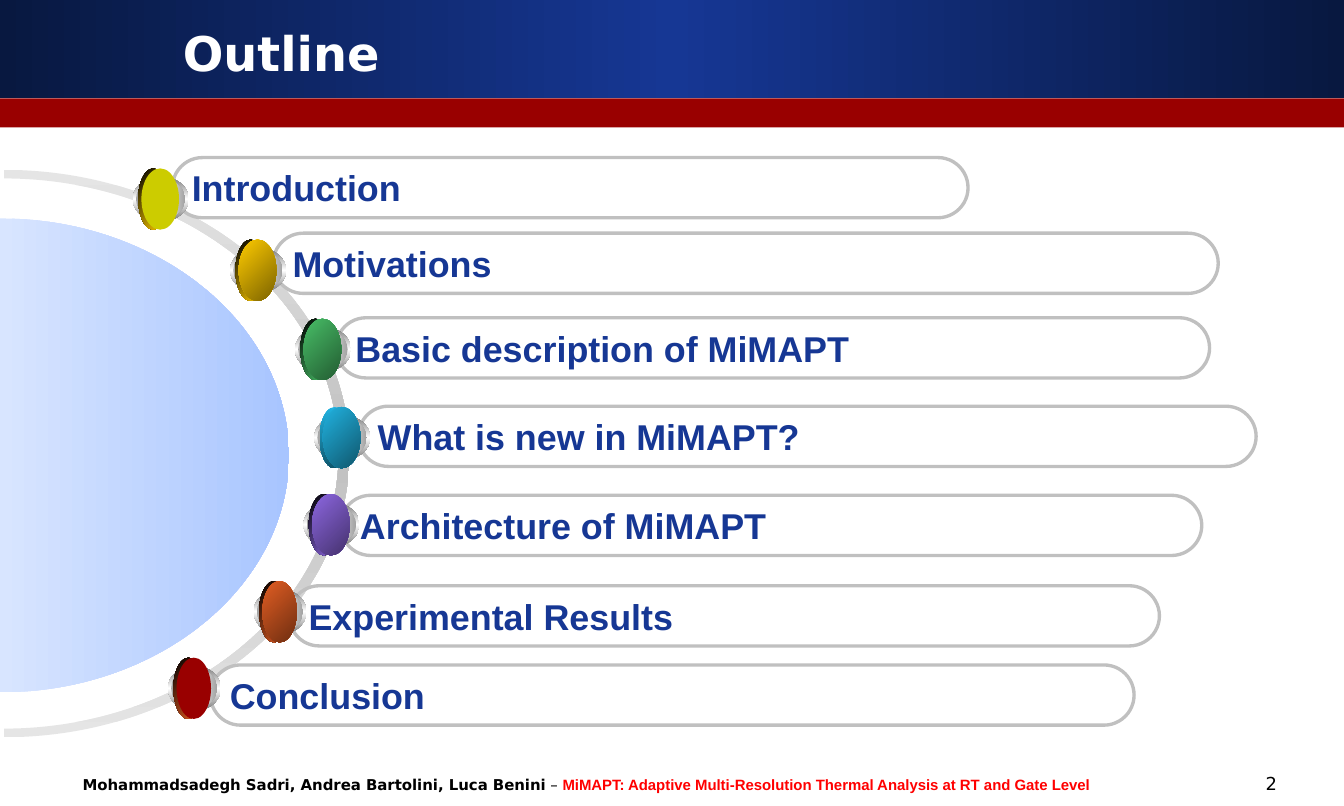
from copy import deepcopy

from pptx import Presentation, util as u
from pptx.dml.color import RGBColor
from pptx.enum import shapes as sh, text as tx
from pptx.oxml.ns import qn

WIDE, HIGH = u.Inches(12.5), u.Inches(7.5)
KAPPA = 0.55  # handle length of a quarter ellipse

NAVY, BLUE = RGBColor(0x08, 0x18, 0x40), RGBColor(0x16, 0x37, 0x94)
CRIMSON, RED = RGBColor(0x99, 0, 0), RGBColor(0xFF, 0, 0)
BLACK, WHITE = RGBColor(0, 0, 0), RGBColor(0xFF, 0xFF, 0xFF)
SILVER, PALE = RGBColor(0xC0, 0xC0, 0xC0), RGBColor(0xE5, 0xE5, 0xE5)
GREY, ASH = RGBColor(0x76, 0x76, 0x76), RGBColor(0xA2, 0xA2, 0xA2)
MIST, SKY = RGBColor(0xD8, 0xE5, 0xFF), RGBColor(0xA8, 0xC5, 0xFF)
GOLD, BRONZE = RGBColor(0xFF, 0xCC, 0), RGBColor(0x7C, 0x63, 0)
GREEN, PINE = RGBColor(0x48, 0xBE, 0x67), RGBColor(0x23, 0x5C, 0x32)
CYAN, TEAL = RGBColor(0x21, 0xB3, 0xE1), RGBColor(0x10, 0x57, 0x6D)
LILAC, PLUM = RGBColor(0x8D, 0x67, 0xE1), RGBColor(0x45, 0x32, 0x6D)
RUST, BROWN = RGBColor(0xE3, 0x5E, 0x23), RGBColor(0x6E, 0x2E, 0x11)
LIME = RGBColor(0xCC, 0xCC, 0)

SANS, ARIAL = "DejaVu Sans", "Arial"

# text, pill (left, top, width), bead (left, top), trim, back colours and angle, face colours
ITEMS = [
    ("Introduction", (12.83, 19.55, 59.2), (9.88, 20.9), 0,
     (BLACK, GOLD), 45, (LIME,)),
    ("Motivations", (20.32, 28.93, 70.32), (17.12, 29.73), 0,
     (BLACK, GOLD), 45, (GOLD, BRONZE)),
    ("Basic description of MiMAPT", (25, 39.42, 65), (21.95, 39.55), 0,
     (BLACK, GREEN), 45, (GREEN, PINE)),
    ("What is new in MiMAPT?", (26.66, 50.4, 66.8), (23.38, 50.5), 0,
     (CYAN, TEAL), 90, (CYAN, TEAL)),
    ("Architecture of MiMAPT", (25.34, 61.45, 64.08), (22.58, 61.3), 0,
     (BLACK, LILAC), 45, (LILAC, PLUM)),
    ("Experimental Results", (21.52, 72.67, 64.75), (18.88, 72.1), 0.24,
     (BLACK, RUST), 45, (RUST, BROWN)),
    ("Conclusion", (15.66, 82.5, 68.72), (12.5, 81.6), 0.24,
     (BLACK, RUST), 45, (CRIMSON,)),
]


def area(x, y, w, h):
    """Turn percentages of the slide's size into lengths."""
    return [int(part * full / 100) for part, full in
            zip((x, y, w, h), (WIDE, HIGH, WIDE, HIGH))]


def style(thing, **values):
    for name, value in values.items():
        setattr(thing, name, value)


def paint(shape, tones, angle=0):
    """Fill with one colour or evenly spaced stops; the angle runs clockwise."""
    shape.shadow.inherit = False
    shape.line.fill.background()
    fill = shape.fill
    if len(tones) == 1:
        fill.solid()
        fill.fore_color.rgb = tones[0]
        return
    fill.gradient()
    fill.gradient_angle = -angle % 360
    stops = shape._element.spPr.find(".//" + qn("a:gsLst"))
    for _ in tones[2:]:
        stops.append(deepcopy(stops[-1]))
    for i, (stop, tone) in enumerate(zip(fill.gradient_stops, tones)):
        stop.position = i / (len(tones) - 1)
        stop.color.rgb = tone


def form(shapes, kind, box, tones, angle=0):
    paint(shapes.add_shape(kind, *area(*box)), tones, angle)


def write(para, words, tone, **values):
    run = para.add_run()
    run.text = words
    style(run.font, **values)
    run.font.color.rgb = tone


def label(slide, box):
    """Add a text box and return its first paragraph."""
    frame = slide.shapes.add_textbox(*area(*box)).text_frame
    frame.word_wrap = True
    return frame.paragraphs[0]


def bow(x, y, rx, ry):
    """Start, handles and ends of two curves: the right half of an ellipse."""
    steps = [(0, -1), (KAPPA, -1), (1, -KAPPA), (1, 0),
             (1, KAPPA), (KAPPA, 1), (0, 1)]
    return [((x + rx * a) * WIDE / 100, (y + ry * b) * HIGH / 100)
            for a, b in steps]


def outline(slide, bows, tones, angle=0):
    """Join half ellipses into one closed outline of cubic curves."""
    points = sum(bows, [])
    pen = slide.shapes.build_freeform(*points[0])
    pen.add_line_segments(points[1:], close=True)
    shape = pen.convert_to_shape()
    route = shape._element.spPr.find(".//" + qn("a:path"))
    nodes = list(route)
    for base in range(0, len(points), 7):
        for first in (base + 1, base + 4):
            curve = nodes[first]
            curve.tag = qn("a:cubicBezTo")
            for node in nodes[first + 1:first + 3]:
                curve.append(node[0])
                route.remove(node)
    paint(shape, tones, angle)


def pill(slide, words, x, y, w):
    shape = slide.shapes.add_shape(
        sh.MSO_SHAPE.ROUNDED_RECTANGLE, *area(x, y, w, 7.47))
    shape.adjustments[0] = 0.5
    shape.shadow.inherit = False
    shape.fill.background()
    shape.line.color.rgb = SILVER
    shape.line.width = u.Pt(2.25)
    style(shape.text_frame, word_wrap=True, vertical_anchor=tx.MSO_ANCHOR.MIDDLE)
    para = shape.text_frame.paragraphs[0]
    para.alignment = tx.PP_ALIGN.LEFT
    write(para, words, BLUE, size=u.Pt(24), name=ARIAL, bold=True)


def bead(slide, x, y, trim, back, angle, face):
    """Two grey rings, a dark rim and a coloured face, as one group."""
    layers = [
        ((x, y + 1, 4.16 - trim, 5.6), (GREY, WHITE, GREY), 90),
        ((x + 0.24, y + 1.33, 3.68 - trim, 4.93), (ASH, WHITE, ASH), 0),
        ((x + 0.4, y, 2.24, 7.6), back, angle),
        ((x + 0.64, y, 2.8 - trim, 7.6), face, 45),
    ]
    group = slide.shapes.add_group_shape()
    for layer in layers:
        form(group.shapes, sh.MSO_SHAPE.OVAL, *layer)


def header(slide):
    bar = sh.MSO_SHAPE.RECTANGLE
    form(slide.shapes, bar, (0, 0, 100, 12.13), (NAVY, BLUE, NAVY))
    form(slide.shapes, bar, (0, 12.2, 100, 3.6), (CRIMSON,))
    title = slide.shapes.title
    slide.shapes._spTree.append(title._element)
    names = ("left", "top", "width", "height")
    style(title, **dict(zip(names, area(12.8, 2.4, 74.24, 8.27))))
    style(title.text_frame, word_wrap=True, auto_size=tx.MSO_AUTO_SIZE.NONE,
          vertical_anchor=tx.MSO_ANCHOR.MIDDLE)
    para = title.text_frame.paragraphs[0]
    para.alignment = tx.PP_ALIGN.LEFT
    write(para, "Outline", WHITE, size=u.Pt(32), name=SANS, bold=True)


def footer(slide):
    para = label(slide, (5.36, 95.6, 81.6, 4.37))
    small = u.Pt(10)
    write(para, "Mohammadsadegh Sadri, Andrea Bartolini, Luca Benini", BLACK,
          size=small, name=SANS, bold=True)
    write(para, " – ", BLACK, size=small, name=SANS, bold=False)
    write(para, "MiMAPT: Adaptive Multi-Resolution Thermal Analysis "
          "at RT and Gate Level", RED, size=small, name=ARIAL, bold=True)
    page = label(slide, (85.4, 95.2, 10.4, 3.73))
    page.alignment = tx.PP_ALIGN.RIGHT
    write(page, "2", BLACK, size=u.Pt(12), name=SANS)


def main():
    deck = Presentation()
    style(deck, slide_width=WIDE, slide_height=HIGH)
    slide = deck.slides.add_slide(deck.slide_layouts[5])
    header(slide)
    footer(slide)
    ring = [bow(0.28, 56.27, 25.72, 35.2), bow(0.28, 56.27, 24.92, 34.13)[::-1]]
    outline(slide, ring, (PALE, SILVER, PALE), 90)
    outline(slide, [bow(0, 56.5, 21.5, 29.4)], (MIST, SKY))
    for words, place, spot, *look in ITEMS:
        pill(slide, words, *place)
        bead(slide, *spot, *look)
    deck.save("out.pptx")


if __name__ == "__main__":
    main()
